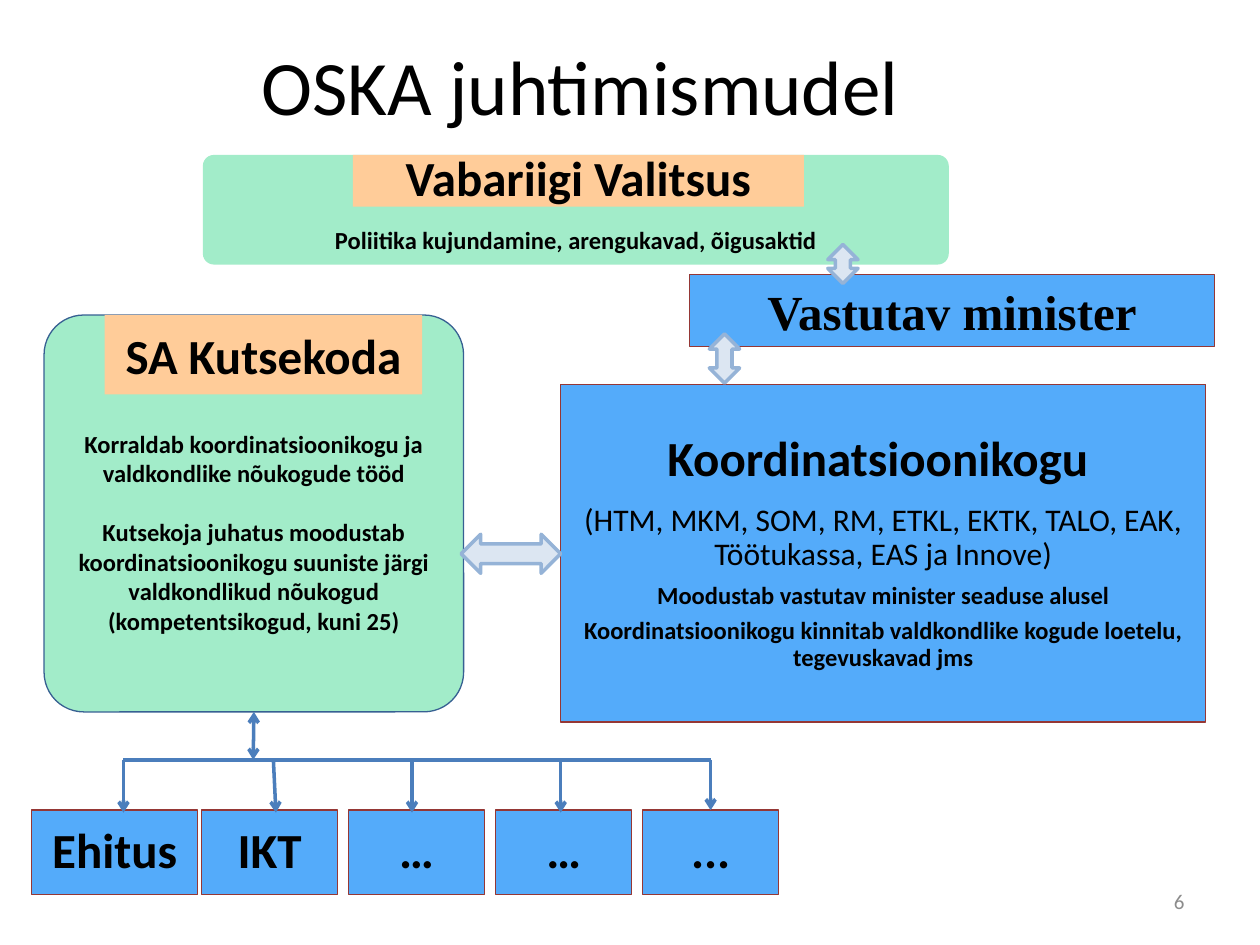
from lxml import etree
from pptx import Presentation
from pptx.dml.color import RGBColor
from pptx.enum.shapes import MSO_CONNECTOR as Connector, MSO_SHAPE as Shape
from pptx.enum.text import MSO_ANCHOR as Anchor, PP_ALIGN as Align
from pptx.oxml.ns import qn
from pptx.util import Inches, Pt

COLORS = {
    "text": "000000", "number": "8C8C8C", "green": "A2ECC9", "peach": "FFCC99",
    "blue": "54ABFA", "red_line": "953735", "navy_line": "376092",
    "connector": "4B7EBC", "arrow": "DCE6F2", "arrow_line": "95B3D7",
}


class SlideBuilder:
    """Holds the style and the current slide."""

    def __init__(self, slide, font="Calibri"):
        self.slide = slide
        self.font = font

    def color(self, name):
        return RGBColor.from_string(COLORS[name])

    def add_run(self, paragraph, text, size, bold=False, color="text", font=None):
        run = paragraph.add_run()
        run.text = text
        run.font.name = font or self.font
        run.font.size = Pt(size)
        run.font.bold = bold
        run.font.color.rgb = self.color(color)

    def title(self, text, left, top, width, height):
        title = self.slide.shapes.title
        title.left, title.top = Inches(left), Inches(top)
        title.width, title.height = Inches(width), Inches(height)
        title.text_frame.vertical_anchor = Anchor.MIDDLE
        paragraph = title.text_frame.paragraphs[0]
        paragraph.alignment = Align.CENTER
        self.add_run(paragraph, text, 44)

    def page_number(self, text, left, top, width, height):
        box = self.slide.shapes.add_textbox(
            Inches(left), Inches(top), Inches(width), Inches(height))
        box.text_frame.word_wrap = True
        box.text_frame.vertical_anchor = Anchor.MIDDLE
        paragraph = box.text_frame.paragraphs[0]
        paragraph.alignment = Align.RIGHT
        self.add_run(paragraph, text, 12, color="number")

    def shape(self, kind, left, top, width, height, fill, line=None, weight=0.75):
        shape = self.slide.shapes.add_shape(
            kind, Inches(left), Inches(top), Inches(width), Inches(height))
        shape.shadow.inherit = False
        shape.fill.solid()
        shape.fill.fore_color.rgb = self.color(fill)
        if line:
            shape.line.color.rgb = self.color(line)
            shape.line.width = Pt(weight)
        else:
            shape.line.fill.background()
        return shape

    def panel(self, left, top, width, height, texts, text_top, gap=0, line=None):
        """Rounded green panel whose text starts at a set distance from its top."""
        panel = self.shape(Shape.ROUNDED_RECTANGLE, left, top, width, height, "green", line)
        panel.adjustments[0] = 0.1
        frame = panel.text_frame
        frame.word_wrap = True
        frame.vertical_anchor = Anchor.TOP
        frame.margin_top = Inches(text_top)
        for index, text in enumerate(texts):
            paragraph = frame.add_paragraph() if index else frame.paragraphs[0]
            paragraph.alignment = Align.CENTER
            if index:
                paragraph.space_before = Pt(gap)
            self.add_run(paragraph, text, 14, bold=True)
        return panel

    def box(self, left, top, width, height, lines, fill="blue", line="red_line",
            margin=0.16, spacing=0.9, font=None):
        """Rectangle with centred lines, each given as (text, size, bold)."""
        box = self.shape(Shape.RECTANGLE, left, top, width, height, fill, line)
        frame = box.text_frame
        frame.word_wrap = True
        frame.vertical_anchor = Anchor.MIDDLE
        frame.margin_left = frame.margin_right = Inches(margin)
        frame.margin_top = frame.margin_bottom = Inches(margin)
        for index, (text, size, bold) in enumerate(lines):
            paragraph = frame.add_paragraph() if index else frame.paragraphs[0]
            paragraph.alignment = Align.CENTER
            paragraph.line_spacing = spacing
            if spacing < 1:
                paragraph.space_after = Pt(round(size * 0.35, 1))
            self.add_run(paragraph, text, size, bold, font=font)
        return box

    def block_arrow(self, left, top, width, height, rotation=0):
        arrow = self.shape(Shape.UP_DOWN_ARROW, left, top, width, height,
                           "arrow", "arrow_line", 2)
        arrow.rotation = rotation

    def connector(self, x1, y1, x2, y2, head=False, tail=False):
        connector = self.slide.shapes.add_connector(
            Connector.STRAIGHT, Inches(x1), Inches(y1), Inches(x2), Inches(y2))
        connector.line.color.rgb = self.color("connector")
        connector.line.width = Pt(2)
        line = connector.line._get_or_add_ln()
        for tag, wanted in (("a:headEnd", head), ("a:tailEnd", tail)):
            if wanted:
                etree.SubElement(line, qn(tag), type="arrow")
        etree.SubElement(connector._element.spPr, qn("a:effectLst"))
        return connector


def main():
    presentation = Presentation()
    presentation.slide_width, presentation.slide_height = Inches(10), Inches(7.5)
    builder = SlideBuilder(presentation.slides.add_slide(presentation.slide_layouts[5]))

    builder.title("OSKA juhtimismudel", 1.77, 0.29, 5.67, 0.77)
    builder.page_number("6", 7.17, 6.95, 2.33, 0.4)

    # Government
    builder.panel(1.61, 1.23, 5.92, 0.87,
                  ["Poliitika kujundamine, arengukavad, õigusaktid"], text_top=0.53)
    builder.box(2.8, 1.23, 3.58, 0.41, [("Vabariigi Valitsus", 28, True)],
                fill="peach", line=None)

    # Foundation
    foundation = builder.panel(
        0.35, 2.5, 3.33, 3.15,
        ["Korraldab koordinatsioonikogu ja valdkondlike nõukogude tööd",
         "Kutsekoja juhatus moodustab koordinatsioonikogu suuniste järgi "
         "valdkondlikud nõukogud (kompetentsikogud, kuni 25)"],
        text_top=0.81, gap=17, line="navy_line")
    builder.box(0.83, 2.5, 2.52, 0.63, [("SA Kutsekoda", 28, True)],
                fill="peach", line=None, margin=0.05, spacing=1)

    # Coordination council and minister
    builder.box(4.45, 3.05, 5.12, 2.68, [
        ("Koordinatsioonikogu ", 28, True),
        ("(HTM, MKM, SOM, RM, ETKL, EKTK, TALO, EAK, Töötukassa, EAS ja Innove)", 18, False),
        ("Moodustab vastutav minister seaduse alusel", 14, True),
        ("Koordinatsioonikogu kinnitab valdkondlike kogude loetelu, tegevuskavad jms", 14, True),
    ])
    builder.box(5.47, 2.18, 4.17, 0.57, [("Vastutav minister", 28, True)],
                margin=0.05, spacing=1, font="Times New Roman")

    # Sector councils
    sectors = [builder.box(0.25, 6.43, 1.32, 0.67, [("Ehitus", 28, True)])]
    for index, name in enumerate(["IKT", "…", "…", "..."]):
        sectors.append(builder.box(1.6 + 3.5 / 3 * index, 6.43, 1.08, 0.67,
                                   [(name, 28, True)]))

    # Branches from the foundation to the sector councils
    trunk = builder.connector(2.02, 5.65, 2.01, 6.03, head=True, tail=True)
    trunk.begin_connect(foundation, 2)
    builder.connector(0.98, 6.03, 5.64, 6.03)
    for start, end in ((0.98, 0.98), (2.17, 2.19), (3.27, 3.27), (4.45, 4.45), (5.64, 5.64)):
        branch = builder.connector(start, 6.03, end, 6.45, tail=True)
    branch.end_connect(sectors[-1], 0)

    # Two-way links between the bodies
    builder.block_arrow(3.9, 4, 0.31, 0.79, rotation=90)
    builder.block_arrow(6.57, 1.94, 0.24, 0.31)
    builder.block_arrow(5.63, 2.65, 0.24, 0.39)

    presentation.save("out.pptx")


if __name__ == "__main__":
    main()
